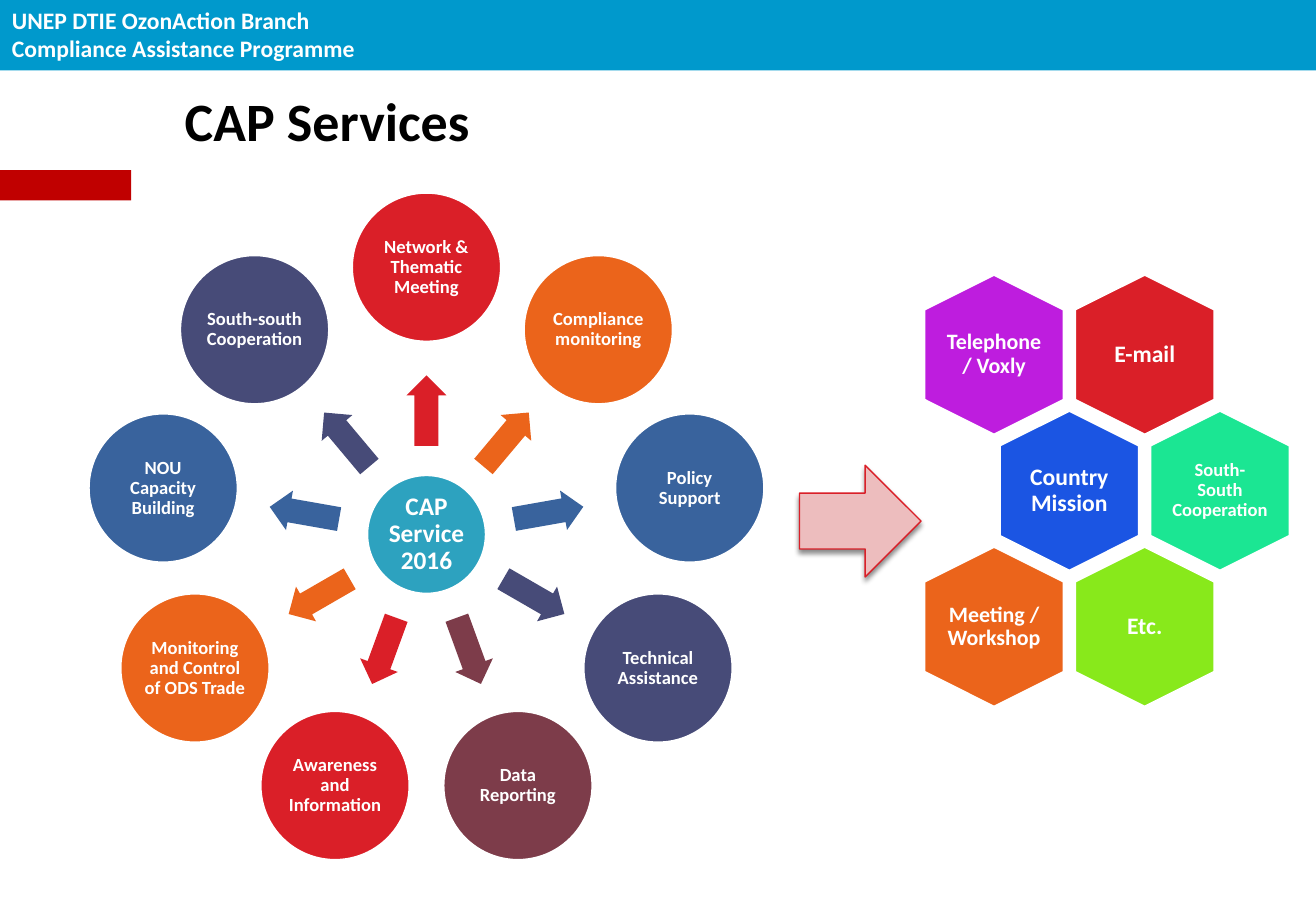
"""Build the CAP Services slide: a radial diagram leading to a cluster of hexagons."""
import math
from dataclasses import dataclass

from lxml import etree
from pptx import Presentation
from pptx.dml.color import RGBColor
from pptx.enum import shapes, text
from pptx.oxml import ns
from pptx.util import Inches, Pt


@dataclass(frozen=True)
class Theme:
    font: str = "Calibri"
    white: str = "FFFFFF"
    black: str = "000000"
    banner: str = "0099CC"
    accent: str = "C00000"
    hub: str = "2DA2BF"
    red: str = "DA1F28"
    pink: str = "EDBDBE"
    orange: str = "EB641B"
    blue: str = "39639D"
    indigo: str = "474B78"
    plum: str = "7D3C4A"
    purple: str = "BE1DDE"
    royal: str = "1B55E3"
    mint: str = "1BE693"
    lime: str = "88E91B"
    title_size: int = 32
    hub_size: int = 15
    large_size: int = 14
    medium_size: int = 13
    small_size: int = 11
    outline: float = 1.5


class SlideBuilder:
    def __init__(self, slide, theme):
        self.slide = slide
        self.theme = theme

    def fill_text(self, frame, wording, size, color, align, spacing=None):
        for index, line in enumerate(wording.split("\n")):
            paragraph = frame.add_paragraph() if index else frame.paragraphs[0]
            paragraph.text = line
            paragraph.alignment = align
            paragraph.line_spacing = spacing
            paragraph.font.name = self.theme.font
            paragraph.font.size = Pt(size)
            paragraph.font.bold = True
            paragraph.font.color.rgb = RGBColor.from_string(color)

    def center_text(self, shape, wording, size, inset):
        frame = shape.text_frame
        frame.word_wrap = True
        frame.vertical_anchor = text.MSO_ANCHOR.MIDDLE
        frame.margin_left = frame.margin_right = Inches(inset)
        frame.margin_top = frame.margin_bottom = Inches(inset)
        self.fill_text(frame, wording, size, self.theme.white, text.PP_ALIGN.CENTER, 0.9)

    def title(self, wording, left, top, width, height):
        title = self.slide.shapes.title
        title.left, title.top = Inches(left), Inches(top)
        title.width, title.height = Inches(width), Inches(height)
        title.text_frame.vertical_anchor = text.MSO_ANCHOR.MIDDLE
        self.fill_text(title.text_frame, wording, self.theme.title_size,
                       self.theme.black, text.PP_ALIGN.LEFT)

    def header(self, wording, left, top, width, height):
        box = self.slide.shapes.add_textbox(
            Inches(left), Inches(top), Inches(width), Inches(height))
        box.text_frame.word_wrap = False
        box.text_frame.auto_size = text.MSO_AUTO_SIZE.SHAPE_TO_FIT_TEXT
        self.fill_text(box.text_frame, wording, self.theme.large_size,
                       self.theme.white, text.PP_ALIGN.LEFT)

    def shape(self, kind, left, top, width, height, fill, line=None, weight=1.5):
        shape = self.slide.shapes.add_shape(
            kind, Inches(left), Inches(top), Inches(width), Inches(height))
        shape.shadow.inherit = False
        shape.fill.solid()
        shape.fill.fore_color.rgb = RGBColor.from_string(fill)
        if line:
            shape.line.color.rgb = RGBColor.from_string(line)
            shape.line.width = Pt(weight)
        else:
            shape.line.fill.background()
        return shape

    def bar(self, left, top, width, height, fill):
        self.shape(shapes.MSO_SHAPE.RECTANGLE, left, top, width, height, fill)

    def circle(self, x, y, diameter, fill, wording, size):
        circle = self.shape(shapes.MSO_SHAPE.OVAL, x - diameter / 2, y - diameter / 2,
                            diameter, diameter, fill, self.theme.white, self.theme.outline)
        self.center_text(circle, wording, size, 0.02)

    def spoke(self, x, y, angle, fill):
        width, height = 0.58, 0.33
        arrow = self.shape(shapes.MSO_SHAPE.RIGHT_ARROW, x - width / 2, y - height / 2,
                           width, height, fill)
        arrow.adjustments[0] = 0.6
        arrow.rotation = angle % 360

    def hexagon(self, x, y, fill, wording, size):
        width, height = 1.32, 1.15
        hexagon = self.shape(shapes.MSO_SHAPE.HEXAGON, x - width / 2, y - height / 2,
                             width, height, fill, self.theme.white, self.theme.outline)
        hexagon.rotation = 90
        label_width, label_height = 0.79, 0.91
        label = self.slide.shapes.add_textbox(
            Inches(x - label_width / 2), Inches(y - label_height / 2),
            Inches(label_width), Inches(label_height))
        self.center_text(label, wording, size, 0)

    def shadowed_arrow(self, left, top, width, height):
        arrow = self.shape(shapes.MSO_SHAPE.RIGHT_ARROW, left, top, width, height,
                           self.theme.pink, self.theme.red, 0.79)
        effects = arrow.element.spPr.find(ns.qn("a:effectLst"))
        shadow = etree.SubElement(effects, ns.qn("a:outerShdw"), blurRad=str(Pt(3)),
                                  dist=str(Pt(2.4)), dir="5400000", rotWithShape="0")
        color = etree.SubElement(shadow, ns.qn("a:srgbClr"), val=self.theme.black)
        etree.SubElement(color, ns.qn("a:alpha"), val="45000")


def main():
    theme = Theme()
    presentation = Presentation()
    presentation.slide_width = Inches(10.83)
    presentation.slide_height = Inches(7.5)
    slide = presentation.slides.add_slide(presentation.slide_layouts[5])
    builder = SlideBuilder(slide, theme)

    builder.bar(0, 1.4, 1.08, 0.25, theme.accent)
    builder.bar(0, 0, 10.83, 0.58, theme.banner)
    builder.header("UNEP DTIE OzonAction Branch\nCompliance Assistance Programme",
                   0, 0, 3.17, 0.57)
    builder.title("CAP Services", 1.42, 0.58, 9.25, 0.82)

    contacts = [
        (1, 0, theme.red, "E-mail", theme.large_size),
        (0, 0, theme.purple, "Telephone / Voxly", theme.medium_size),
        (0.5, 1, theme.royal, "Country Mission", theme.large_size),
        (1.5, 1, theme.mint, "South-South Cooperation", theme.small_size),
        (1, 2, theme.lime, "Etc.", theme.large_size),
        (0, 2, theme.orange, "Meeting / Workshop", theme.medium_size),
    ]
    for column, row, fill, wording, size in contacts:
        builder.hexagon(8.18 + 1.24 * column, 2.92 + 1.12 * row, fill, wording, size)

    builder.shadowed_arrow(6.58, 3.83, 1, 0.92)

    hub_x, hub_y = 3.51, 4.4
    builder.circle(hub_x, hub_y, 0.98, theme.hub, "CAP Service 2016", theme.hub_size)
    services = [
        ("Network & Thematic Meeting", theme.red),
        ("Compliance monitoring", theme.orange),
        ("Policy Support", theme.blue),
        ("Technical Assistance", theme.indigo),
        ("Data Reporting", theme.plum),
        ("Awareness and Information", theme.red),
        ("Monitoring and Control of ODS Trade", theme.orange),
        ("NOU Capacity Building", theme.blue),
        ("South-south Cooperation", theme.indigo),
    ]
    for index, (wording, fill) in enumerate(services):
        angle = -90 + index * 360 / len(services)
        across, down = math.cos(math.radians(angle)), math.sin(math.radians(angle))
        builder.spoke(hub_x + 1.02 * across, hub_y + 1.02 * down, angle, fill)
        builder.circle(hub_x + 2.2 * across, hub_y + 2.2 * down, 1.23,
                       fill, wording, theme.small_size)

    presentation.save("out.pptx")


if __name__ == "__main__":
    main()
